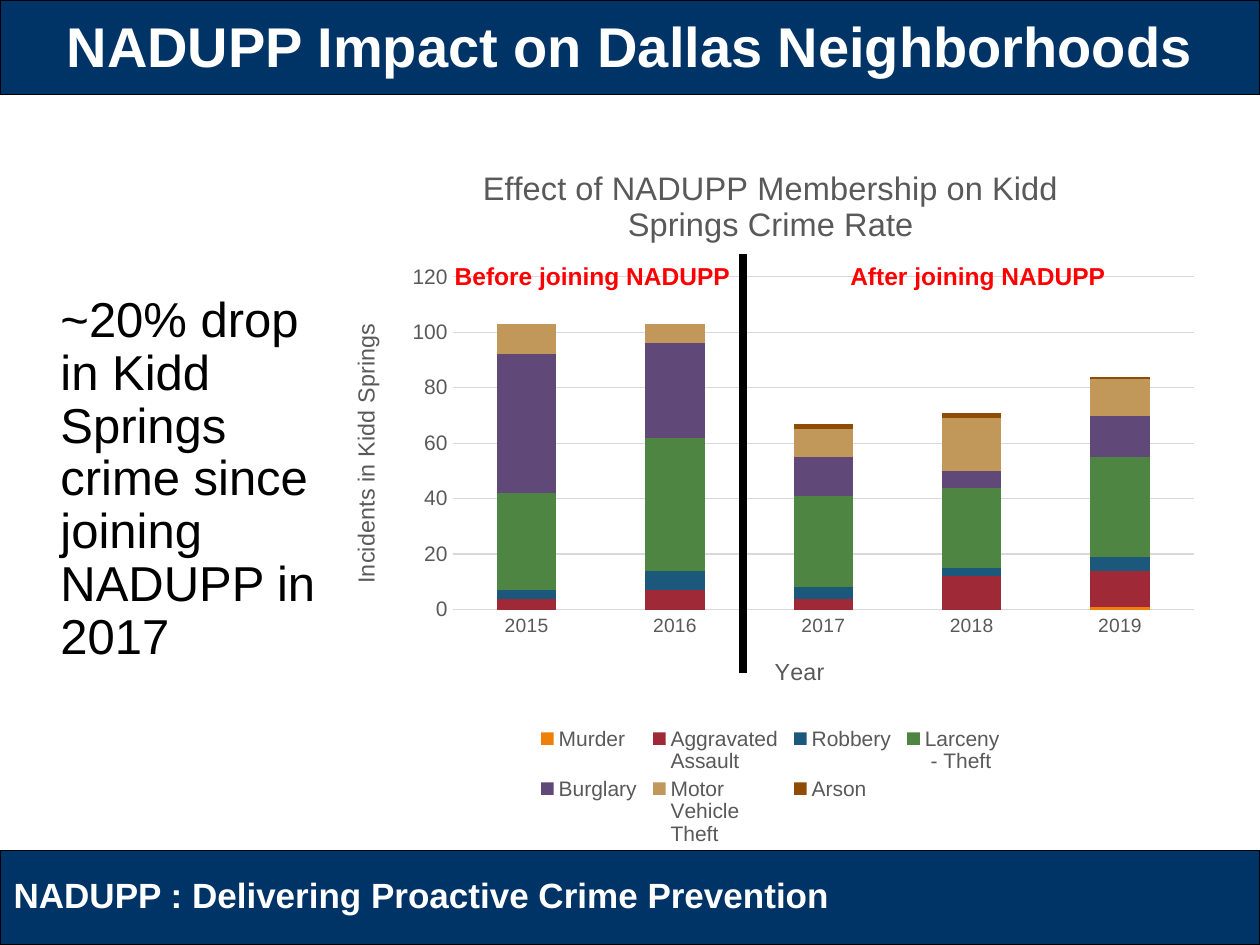
from lxml import etree
from pptx import Presentation
from pptx.chart.data import CategoryChartData as Data
from pptx.dml.color import RGBColor as RGB
from pptx.enum.chart import XL_CHART_TYPE as Kind, XL_LEGEND_POSITION as Side, XL_TICK_MARK as Tick
from pptx.enum.shapes import MSO_CONNECTOR as Link, MSO_SHAPE as Form
from pptx.enum.text import MSO_ANCHOR as Anchor, PP_ALIGN as Align
from pptx.oxml.ns import qn
from pptx.util import Inches, Pt

NAVY = RGB(0x00, 0x33, 0x66)
WHITE = RGB(0xFF, 0xFF, 0xFF)
BLACK = RGB(0x00, 0x00, 0x00)
RED = RGB(0xFF, 0x00, 0x00)
GREY = RGB(0x59, 0x59, 0x59)
PALE = RGB(0xD9, 0xD9, 0xD9)
FONT = "Arial"

TITLE = "NADUPP Impact on Dallas Neighborhoods"
BODY = "~20% drop in Kidd Springs crime since joining NADUPP in 2017"
HEAD = "Effect of NADUPP Membership on Kidd\nSprings Crime Rate"
LABELS = [
    ("NADUPP : Delivering Proactive Crime Prevention", (0.01, 6.88, 6.74, 0.44), 20, WHITE),
    ("Before joining NADUPP", (3.51, 2.02, 2.41, 0.34), 14, RED),
    ("After joining NADUPP", (6.65, 2.02, 2.25, 0.34), 14, RED),
]
BARS = [(0, 0, 10, 0.75), (0, 6.75, 10, 0.75)]
YEARS = ["2015", "2016", "2017", "2018", "2019"]
CRIMES = [
    ("Murder", (0, 0, 0, 0, 1), RGB(0xF0, 0x7F, 0x09)),
    ("Aggravated\nAssault", (4, 7, 4, 12, 13), RGB(0x9F, 0x29, 0x36)),
    ("Robbery", (3, 7, 4, 3, 5), RGB(0x1B, 0x58, 0x7C)),
    ("Larceny\n - Theft", (35, 48, 33, 29, 36), RGB(0x4E, 0x85, 0x42)),
    ("Burglary", (50, 34, 14, 6, 15), RGB(0x60, 0x48, 0x78)),
    ("Motor \nVehicle \nTheft", (11, 7, 10, 19, 13), RGB(0xC1, 0x98, 0x59)),
    ("Arson", (0, 0, 2, 2, 1), RGB(0x90, 0x4C, 0x05)),
]


def style(font, size, color, bold=False):
    font.name, font.size, font.bold = FONT, Pt(size), bold
    font.color.rgb = color


def write(frame, text, size=12, color=BLACK, bold=False, align=None, gap=None, lead=None):
    para = frame.paragraphs[0]
    for num, line in enumerate(text.split("\n")):
        if num:
            para.add_line_break()
        run = para.add_run()
        run.text = line
        style(run.font, size, color, bold)
    if align is not None:
        para.alignment = align
    if gap is not None:
        para.space_before = Pt(gap)
    if lead is not None:
        para.line_spacing = lead
    return para


def box(nums):
    return [Inches(n) for n in nums]


def move(shape, nums):
    shape.left, shape.top, shape.width, shape.height = box(nums)


def place(node, spot, inner=False):
    for old in node.findall(qn("c:layout")):
        node.remove(old)
    lay = etree.Element(qn("c:layout"))
    man = etree.SubElement(lay, qn("c:manualLayout"))
    rules = [("layoutTarget", "inner")] if inner else []
    rules += [("xMode", "edge"), ("yMode", "edge")]
    rules += list(zip("xywh", spot))
    for tag, val in rules:
        etree.SubElement(man, qn("c:" + tag)).set("val", str(val))
    node.insert(0 if inner else 1, lay)


def name(owner, text, size, spot):
    owner.has_title = True
    title = owner.chart_title if hasattr(owner, "chart_title") else owner.axis_title
    write(title.text_frame, text, size=size, color=GREY)
    place(title._element, spot)


def draw(slide):
    data = Data()
    data.categories = YEARS
    for crime, vals, _ in CRIMES:
        data.add_series(crime, vals)
    chart = slide.shapes.add_chart(Kind.COLUMN_STACKED, *box((2.61, 1.13, 7.01, 5.62)), data).chart
    style(chart.font, 12, GREY)
    plot = chart.plots[0]
    plot.gap_width, plot.overlap = 150, 100
    plot.vary_by_categories = False
    for series, (_, _, color) in zip(plot.series, CRIMES):
        series.format.fill.solid()
        series.format.fill.fore_color.rgb = color
    name(chart, HEAD, 18.6, (0.17, 0.03))
    years, count = chart.category_axis, chart.value_axis
    name(years, "Year", 13.3, (0.5, 0.72))
    name(count, "Incidents in Kidd Springs", 13.3, (0.02, 0.25))
    for axis, size in ((years, 11), (count, 12)):
        style(axis.tick_labels.font, size, GREY)
        axis.major_tick_mark = axis.minor_tick_mark = Tick.NONE
    count.minimum_scale, count.maximum_scale, count.major_unit = 0, 120, 20
    count.format.line.fill.background()
    for line in (years.format.line, count.major_gridlines.format.line):
        line.color.rgb, line.width = PALE, Pt(0.75)
    chart.has_legend = True
    key = chart.legend
    key.position, key.include_in_layout = Side.BOTTOM, False
    style(key.font, 12, GREY)
    place(key._element, (0.23, 0.82, 0.54, 0.18))
    area = chart._chartSpace.find(".//" + qn("c:plotArea"))
    place(area, (0.14, 0.19, 0.84, 0.47), inner=True)


def main():
    deck = Presentation()
    deck.slide_width, deck.slide_height = Inches(10), Inches(7.5)
    slide = deck.slides.add_slide(deck.slide_layouts[1])
    title, body = slide.shapes.title, slide.placeholders[1]

    for spot in BARS:
        bar = slide.shapes.add_shape(Form.RECTANGLE, *box(spot))
        bar.shadow.inherit = False
        bar.fill.solid()
        bar.fill.fore_color.rgb = NAVY
        bar.line.color.rgb, bar.line.width = BLACK, Pt(0.75)
        title._element.addprevious(bar._element)

    move(title, (0, 0, 10, 0.78))
    title.text_frame.vertical_anchor = Anchor.MIDDLE
    write(title.text_frame, TITLE, size=32, color=WHITE, bold=True, align=Align.CENTER, lead=0.9)

    move(body, (0.38, 1, 2.23, 5.62))
    body.text_frame.vertical_anchor = Anchor.MIDDLE
    para = write(body.text_frame, BODY, size=28, gap=10, lead=0.9)
    props = para._p.get_or_add_pPr()
    props.set("marL", "0")
    props.set("indent", "0")
    etree.SubElement(props, qn("a:buNone"))

    draw(slide)

    rule = slide.shapes.add_connector(Link.STRAIGHT, *box((5.9, 2.02, 5.9, 5.34)))
    rule.line.color.rgb, rule.line.width = BLACK, Pt(4.5)
    etree.SubElement(rule._element.spPr, qn("a:effectLst"))

    for text, spot, size, color in LABELS:
        label = slide.shapes.add_textbox(*box(spot))
        label.text_frame.word_wrap = False
        write(label.text_frame, text, size=size, color=color, bold=True)

    deck.save("out.pptx")


if __name__ == "__main__":
    main()
